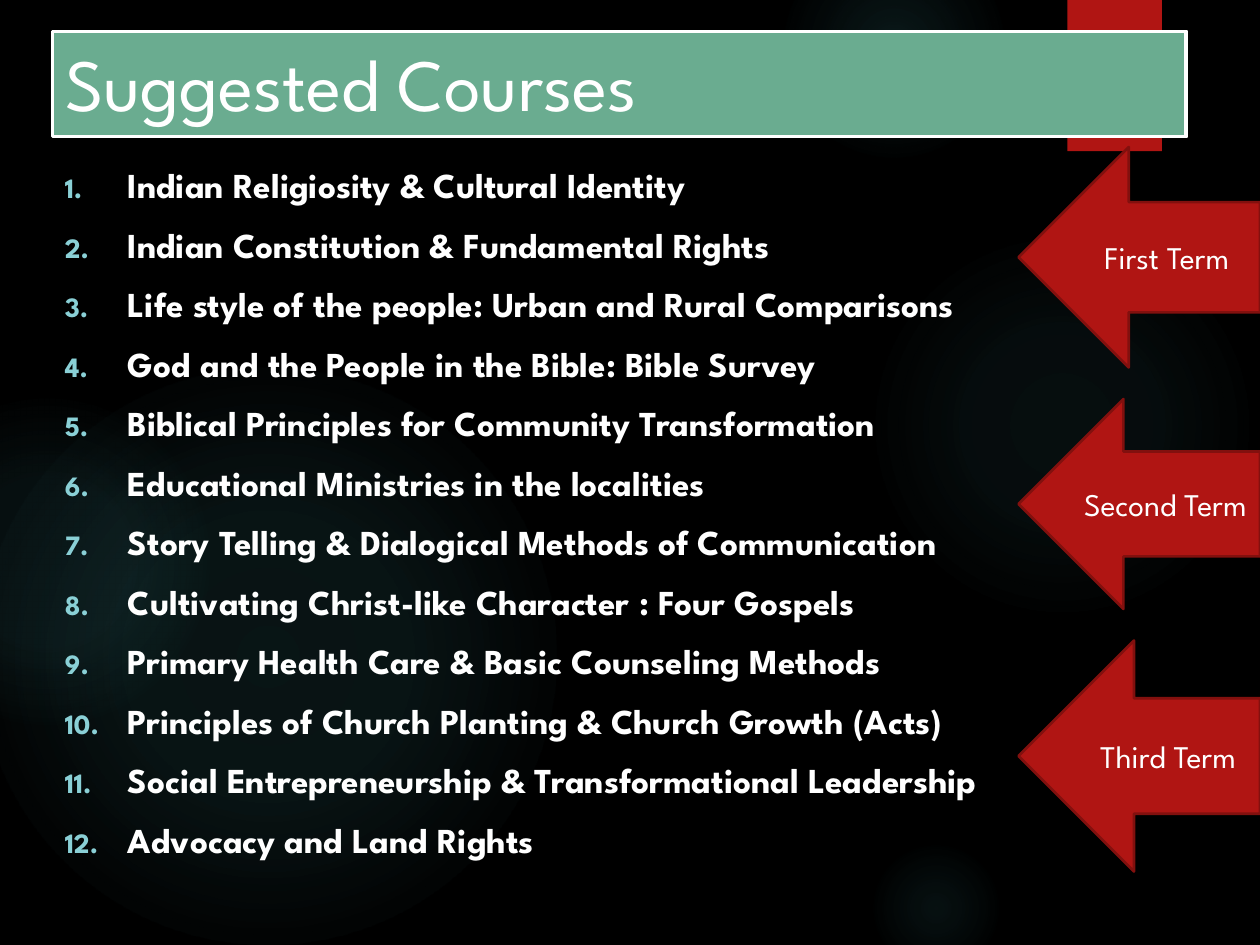
from lxml.etree import SubElement
from pptx import Presentation
from pptx.dml.color import RGBColor as Rgb
from pptx.enum.shapes import MSO_SHAPE as Preset
from pptx.enum.text import MSO_ANCHOR as Anchor, MSO_AUTO_SIZE as AutoSize, PP_ALIGN as Align
from pptx.oxml.ns import qn
from pptx.util import Pt

COLORS = {
    "background": "000000", "glow": "50B9C1", "red": "B01513", "red_edge": "82100E",
    "green": "6AAC90", "white": "FFFFFF", "number": "8AD0D6",
}
FONT = "League Spartan"
COURSES = [
    "Indian Religiosity & Cultural Identity",
    "Indian Constitution & Fundamental Rights",
    "Life style of the people: Urban and Rural Comparisons",
    "God and the People in the Bible: Bible Survey",
    "Biblical Principles for Community Transformation",
    "Educational Ministries in the localities",
    "Story Telling & Dialogical Methods of Communication",
    "Cultivating Christ-like Character : Four Gospels",
    "Primary Health Care & Basic Counseling Methods",
    "Principles of Church Planting & Church Growth (Acts)",
    "Social Entrepreneurship & Transformational Leadership",
    "Advocacy and Land Rights",
]
GLOWS = [
    (496, 132, 222, [(0, 7), (36, 6), (69, 0)]),
    (448, -36, 126, [(0, 14), (36, 7), (73, 0)]),
    (496, 480, 78, [(0, 9), (36, 5), (66, 0)]),
    (-12, 210, 330, [(0, 11), (36, 10), (75, 0)]),
    (-66, 228, 186, [(0, 8), (36, 8), (72, 0)]),
]
TERMS = [("First Term", 84, 126), ("Second Term", 228, 120), ("Third Term", 366, 132)]


def add_xml(parent, tag, **attributes):
    return SubElement(parent, qn(tag), {name: str(value) for name, value in attributes.items()})


class SlideBuilder:
    """Holds the style and the current slide, and adds each kind of element."""

    def __init__(self, presentation):
        self.slide = presentation.slides.add_slide(presentation.slide_layouts[5])
        self.shapes = self.slide.shapes
        self.paint(self.slide.background.fill, "background")

    def paint(self, fill, color):
        fill.solid()
        fill.fore_color.rgb = Rgb.from_string(COLORS[color])

    def outline(self, shape, color, width):
        self.paint(shape.line.fill, color)
        shape.line.width = Pt(width)

    def set_text(self, paragraph, text, size, align=Align.LEFT, bold=False):
        paragraph.text = text
        paragraph.alignment = align
        font = paragraph.runs[0].font
        for name, value in {"name": FONT, "size": Pt(size), "bold": bold}.items():
            setattr(font, name, value)
        font.color.rgb = Rgb.from_string(COLORS["white"])

    def block(self, preset, left, top, width, height, color):
        shape = self.shapes.add_shape(preset, Pt(left), Pt(top), Pt(width), Pt(height))
        shape.shadow.inherit = False
        self.paint(shape.fill, color)
        shape.line.fill.background()
        return shape

    def glow(self, left, top, size, stops):
        shape = self.block(Preset.OVAL, left, top, size, size, "glow")
        properties = shape.element.spPr
        solid = properties.find(qn("a:solidFill"))
        gradient = add_xml(properties, "a:gradFill", rotWithShape=1)
        properties.replace(solid, gradient)
        stop_list = add_xml(gradient, "a:gsLst")
        for position, opacity in stops:
            stop = add_xml(stop_list, "a:gs", pos=position * 1000)
            color = add_xml(stop, "a:srgbClr", val=COLORS["glow"])
            add_xml(color, "a:alpha", val=opacity * 1000)
        circle = add_xml(gradient, "a:path", path="circle")
        add_xml(circle, "a:fillToRect", l=50000, t=50000, r=50000, b=50000)

    def title(self, text, left, top, width, height):
        title = self.shapes.title
        title.element.getparent().append(title.element)
        place = {"left": left, "top": top, "width": width, "height": height}
        for name, value in place.items():
            setattr(title, name, Pt(value))
        self.paint(title.fill, "green")
        self.outline(title, "white", 2.25)
        frame = title.text_frame
        settings = {"word_wrap": True, "auto_size": AutoSize.NONE, "vertical_anchor": Anchor.TOP}
        for name, value in settings.items():
            setattr(frame, name, value)
        self.set_text(frame.paragraphs[0], text, 42)

    def numbered_list(self, items, left, top, width, height):
        frame = self.shapes.add_textbox(Pt(left), Pt(top), Pt(width), Pt(height)).text_frame
        frame.word_wrap = True
        for index, item in enumerate(items):
            paragraph = frame.add_paragraph() if index else frame.paragraphs[0]
            self.set_text(paragraph, item, 20, bold=True)
            paragraph.space_before = Pt(10)
            properties = paragraph._p.get_or_add_pPr()
            properties.set("marL", str(Pt(36)))
            properties.set("indent", str(-Pt(36)))
            add_xml(add_xml(properties, "a:buClr"), "a:srgbClr", val=COLORS["number"])
            add_xml(properties, "a:buSzPct", val=80000)
            add_xml(properties, "a:buAutoNum", type="arabicPeriod")

    def term_arrow(self, text, top, height):
        arrow = self.block(Preset.LEFT_ARROW, 582, top, 138, height, "red")
        self.outline(arrow, "red_edge", 1.5)
        arrow.text_frame.vertical_anchor = Anchor.MIDDLE
        self.set_text(arrow.text_frame.paragraphs[0], text, 18, Align.CENTER)


def main():
    presentation = Presentation()
    presentation.slide_width, presentation.slide_height = Pt(720), Pt(540)
    builder = SlideBuilder(presentation)
    for glow in GLOWS:
        builder.glow(*glow)
    builder.block(Preset.RECTANGLE, 610, 0, 54, 86.4, "red")
    builder.title("Suggested Courses", 30, 18, 648, 60)
    builder.numbered_list(COURSES, 30, 90, 690, 432)
    for term in TERMS:
        builder.term_arrow(*term)
    presentation.save("out.pptx")


if __name__ == "__main__":
    main()
